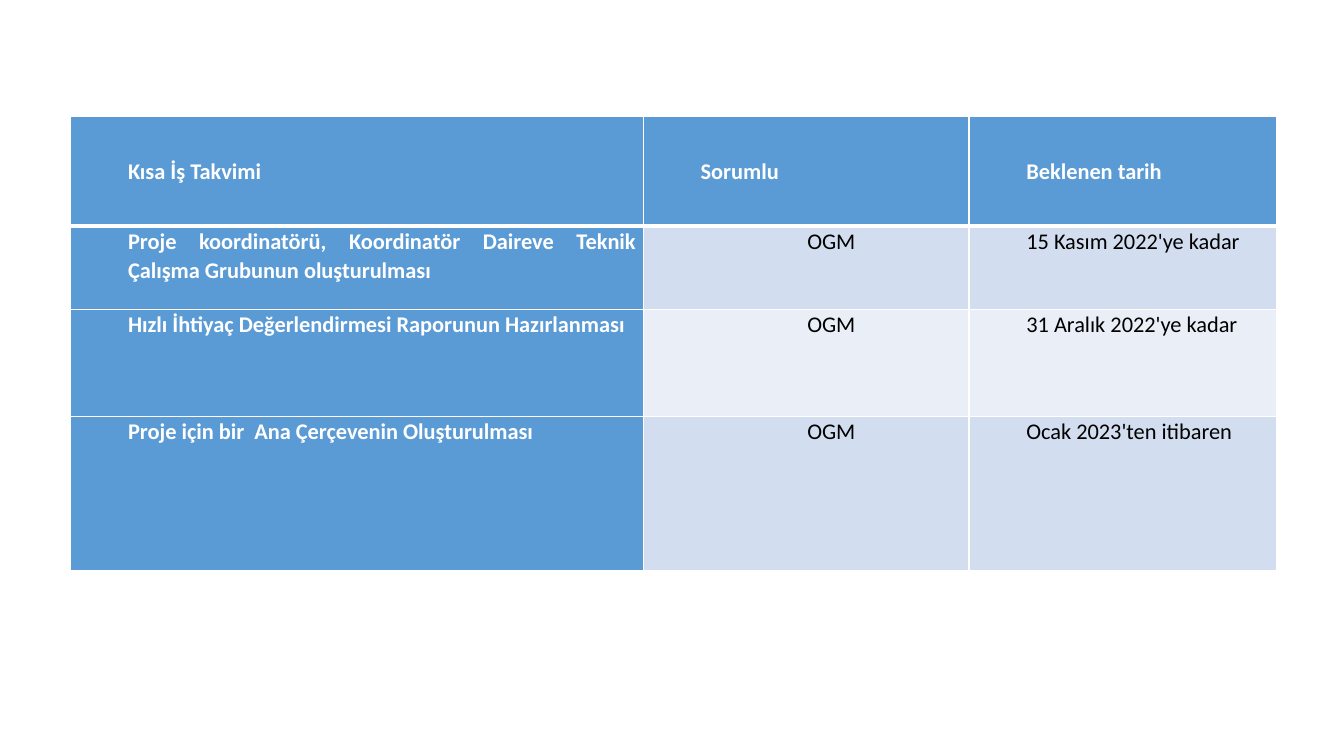
from lxml import etree
from pptx import Presentation, util as u
from pptx.dml.color import RGBColor
from pptx.enum import text
from pptx.oxml.ns import qn

WHITE, BLACK, BLUE = "FFFFFF", "000000", "5B9BD5"
BANDS = ["D2DEEF", "EAEFF7"]
COLUMN_WIDTHS = [5.68, 3.23, 3.05]
ROW_HEIGHTS = [1.09, 0.83, 1.06, 1.53]
SCHEDULE = [
    ["Kısa İş Takvimi", "Sorumlu", "Beklenen tarih"],
    ["Proje koordinatörü, Koordinatör Daireve Teknik Çalışma Grubunun oluşturulması",
     "OGM", "15 Kasım 2022'ye kadar"],
    ["Hızlı İhtiyaç Değerlendirmesi Raporunun Hazırlanması",
     "OGM", "31 Aralık 2022'ye kadar"],
    ["Proje için bir  Ana Çerçevenin Oluşturulması",
     "OGM", "Ocak 2023'ten itibaren"],
]


def color(value):
    return RGBColor.from_string(value)


class ScheduleSlide:
    font = "Calibri"
    size = 16

    def __init__(self, presentation):
        self.slide = presentation.slides.add_slide(presentation.slide_layouts[6])

    def table(self, left, top, rows, widths, heights):
        frame = self.slide.shapes.add_table(
            len(rows), len(widths), u.Inches(left), u.Inches(top),
            u.Inches(sum(widths)), u.Inches(sum(heights)))
        table = frame.table
        for column, width in zip(table.columns, widths):
            column.width = u.Inches(width)
        for row, height in zip(table.rows, heights):
            row.height = u.Inches(height)
        for i, row in enumerate(rows):
            for j, words in enumerate(row):
                self.cell(table.cell(i, j), words, i, j)

    def cell(self, cell, words, row, column):
        header = row == 0
        strong = header or column == 0
        self.borders(cell, L=1, R=1, T=3 if row == 1 else 1, B=3 if header else 1)
        cell.fill.solid()
        cell.fill.fore_color.rgb = color(BLUE if strong else BANDS[(row - 1) % 2])
        cell.margin_left = cell.margin_right = u.Inches(0.07)
        cell.margin_top = cell.margin_bottom = 0
        cell.vertical_anchor = text.MSO_ANCHOR.MIDDLE if header else text.MSO_ANCHOR.TOP
        centered = column == 1 and not header
        self.paragraph(cell.text_frame.paragraphs[0], words, strong,
                       text.PP_ALIGN.CENTER if centered else text.PP_ALIGN.JUSTIFY)

    def paragraph(self, paragraph, words, strong, alignment):
        paragraph.alignment = alignment
        paragraph.line_spacing = 1.07
        paragraph.space_after = u.Pt(3)
        properties = paragraph._p.get_or_add_pPr()
        properties.set("marL", str(u.Inches(0.5)))
        properties.set("indent", "0")
        run = paragraph.add_run()
        run.text = words
        run.font.name = self.font
        run.font.size = u.Pt(self.size)
        run.font.bold = strong
        run.font.color.rgb = color(WHITE if strong else BLACK)

    def borders(self, cell, **widths):
        """Draw white borders, in points by side; call before filling the cell."""
        properties = cell._tc.get_or_add_tcPr()
        for side, width in widths.items():
            line = etree.SubElement(properties, qn(f"a:ln{side}"), w=str(u.Pt(width)))
            fill = etree.SubElement(line, qn("a:solidFill"))
            etree.SubElement(fill, qn("a:srgbClr"), val=WHITE)


def main():
    presentation = Presentation()
    presentation.slide_width = u.Inches(13.33)
    presentation.slide_height = u.Inches(7.5)
    schedule = ScheduleSlide(presentation)
    schedule.table(0.7, 1.15, SCHEDULE, COLUMN_WIDTHS, ROW_HEIGHTS)
    presentation.save("out.pptx")


if __name__ == "__main__":
    main()
